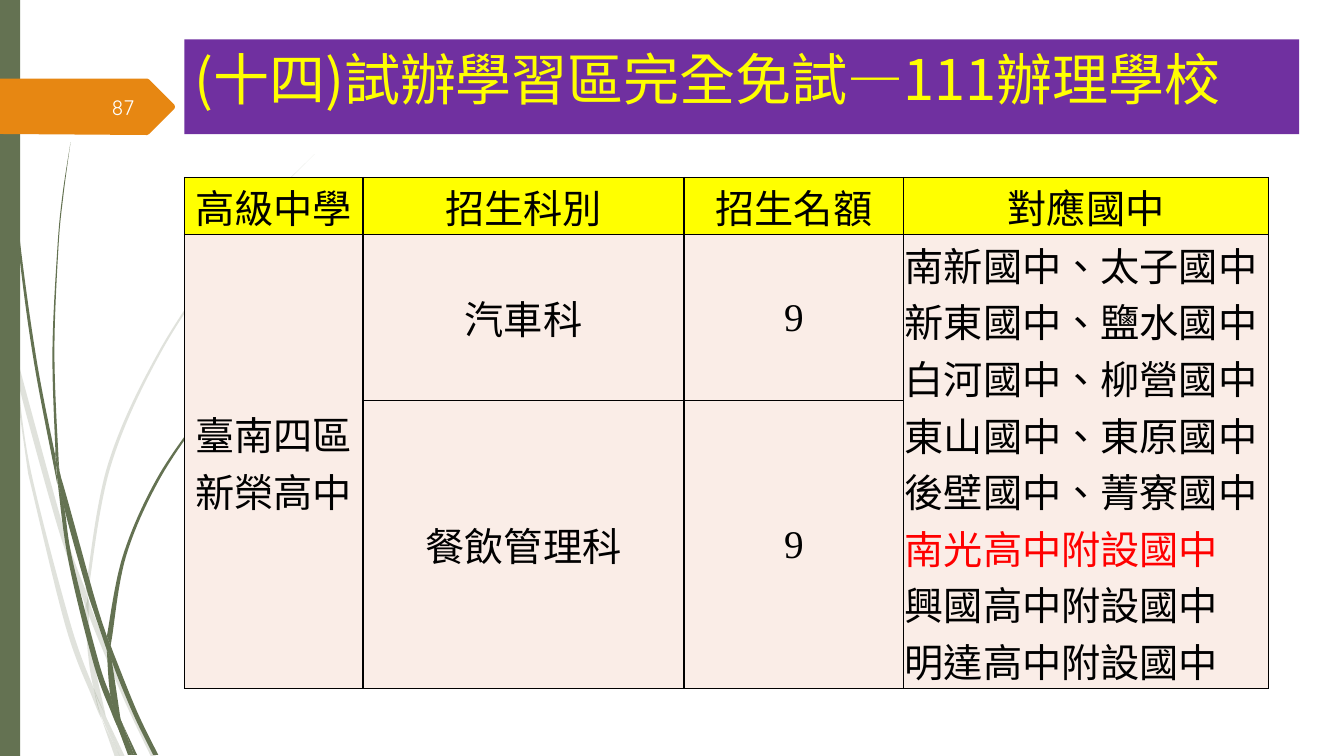
from dataclasses import dataclass

from lxml import etree
from pptx import Presentation
from pptx.dml.color import RGBColor
from pptx.enum.lang import MSO_LANGUAGE_ID
from pptx.enum.shapes import MSO_SHAPE
from pptx.enum.text import MSO_ANCHOR, PP_ALIGN
from pptx.oxml.ns import qn
from pptx.util import Emu, Inches, Pt

RECTANGLE = MSO_SHAPE.RECTANGLE
TOP, MIDDLE = MSO_ANCHOR.TOP, MSO_ANCHOR.MIDDLE
LEFT, CENTER, RIGHT = PP_ALIGN.LEFT, PP_ALIGN.CENTER, PP_ALIGN.RIGHT
TAIWAN = MSO_LANGUAGE_ID.TRADITIONAL_CHINESE

# The page is a grid of 1333 columns and 750 rows
CELL = Inches(0.01)
COLUMNS, ROWS = 1333, 750
GREEN, ORANGE, PURPLE = "647252", "E78712", "7030A0"
YELLOW, BLACK, RED, WHITE, PINK = "FFFF00", "000000", "FF0000", "FEFFFF", "FAEDE7"
CHINESE, DIGITS, NUMBER = "Noto Sans CJK SC", "Times New Roman", "Quicksand"
Point = tuple[float, float]


@dataclass(frozen=True)
class Wisp:
    """A blade of grass: one edge going out, the other coming back."""
    out: list[Point]
    back: list[Point]


@dataclass(frozen=True)
class Style:
    size: float
    font: str
    color: str
    align: PP_ALIGN = CENTER


@dataclass(frozen=True)
class Entry:
    row: int
    column: int
    lines: list[str]
    style: Style
    fill: str = PINK
    rows: int = 1
    margins: tuple[float, float] = (1, 1)


LIGHT_WISPS = [
    Wisp([(11, 350), (8, 322), (0, 282)], [(0, 299), (10, 344)]),
    Wisp([(14, 345), (17, 376), (57, 522), (84, 599)], [(85, 586), (62, 520), (14, 345)]),
    Wisp([(88, 596), (88, 610), (123, 694), (150, 751)],
         [(155, 751), (127, 692), (92, 607)]),
    Wisp([(119, 751), (124, 751)], [(105, 711)]),
    Wisp([(93, 683), (70, 619), (31, 469), (17, 376), (11, 350)],
         [(28, 470), (65, 621), (92, 693), (101, 714)]),
    Wisp([(84, 599), (87, 646), (93, 683), (105, 711)], [(104, 706), (91, 646), (88, 608)]),
    Wisp([(88, 596), (88, 584), (110, 462), (160, 349), (229, 245), (268, 198), (312, 153)],
         [(312, 153), (268, 197), (228, 244), (158, 348), (107, 461), (85, 584)]),
    Wisp([(101, 714), (114, 751)], [(119, 751)]),
    Wisp([(88, 608), (88, 596)], [(85, 586), (84, 599)]),
    Wisp([(93, 683), (99, 707), (119, 751)], [(119, 751), (105, 711)]),
]
DARK_WISPS = [
    Wisp([(3, 0), (3, 48), (7, 110), (17, 233), (33, 355), (57, 481)],
         [(55, 453), (36, 355), (19, 232), (8, 109), (5, 48), (3, 0)]),
    Wisp([(88, 592), (106, 645)], [(106, 631), (93, 590), (60, 472), (64, 505), (88, 592)]),
    Wisp([(110, 641), (111, 656), (132, 708), (152, 749)], [(157, 749), (136, 706), (113, 649)]),
    Wisp([(110, 691), (98, 657), (72, 556), (64, 505), (57, 477)],
         [(57, 477), (68, 557), (93, 659), (111, 708), (117, 722)]),
    Wisp([(60, 472), (58, 453), (54, 349), (58, 245), (63, 193), (70, 141)],
         [(70, 141), (62, 193), (57, 245), (52, 349), (55, 449)]),
    Wisp([(133, 749), (136, 749)], [(122, 719)]),
    Wisp([(57, 477), (64, 505)], [(60, 472), (55, 449), (55, 453)]),
    Wisp([(110, 641), (111, 633), (125, 552), (158, 476), (205, 406), (231, 374), (261, 344)],
         [(260, 344), (231, 373), (204, 405), (156, 474), (122, 551), (106, 631)]),
    Wisp([(117, 722), (127, 749)], [(131, 749)]),
    Wisp([(106, 645), (110, 692), (122, 719)], [(120, 716), (111, 656), (109, 651)]),
    Wisp([(106, 645), (111, 656)], [(110, 641), (106, 631)]),
    Wisp([(110, 691), (117, 722), (131, 749)], [(133, 749), (122, 719)]),
]

BODY = Style(28, CHINESE, BLACK)
COUNT = Style(28, DIGITS, BLACK)
LIST = Style(28, CHINESE, BLACK, LEFT)
RED_LINE = "南光高中附設國中"
HEADINGS = ["高級中學", "招生科別", "招生名額", "對應國中"]
TABLE_COLUMNS, TABLE_ROWS = [177, 318.5, 218, 361.5], [57, 164.5, 285.5]
ENTRIES = [Entry(0, column, [text], BODY, YELLOW) for column, text in enumerate(HEADINGS)] + [
    Entry(1, 0, ["臺南四區", "新榮高中"], BODY, rows=2),
    Entry(1, 1, ["汽車科"], BODY, margins=(2, 0)),
    Entry(2, 1, ["餐飲管理科"], BODY, margins=(2, 0)),
    Entry(1, 2, ["9"], COUNT),
    Entry(2, 2, ["9"], COUNT),
    Entry(1, 3, ["南新國中、太子國中", "新東國中、鹽水國中", "白河國中、柳營國中",
                 "東山國中、東原國中", "後壁國中、菁寮國中", RED_LINE,
                 "興國高中附設國中", "明達高中附設國中"], LIST, rows=2),
]


def grid(count: float) -> Emu:
    return Emu(round(count * CELL))


def paint(target, color: str, opacity: int = 100) -> None:
    target.fill.solid()
    target.fill.fore_color.rgb = RGBColor.from_string(color)
    if opacity < 100:
        swatch = target.fill._xPr.find(f".//{qn('a:srgbClr')}")
        etree.SubElement(swatch, qn("a:alpha"), val=str(opacity * 1000))


def finish(shape, color: str, opacity: int = 100) -> None:
    shape.shadow.inherit = False
    shape.line.fill.background()
    paint(shape, color, opacity)


def write(frame, lines: list[str], style: Style) -> None:
    for index, text in enumerate(lines):
        para = frame.paragraphs[0] if index == 0 else frame.add_paragraph()
        para.alignment = style.align
        span = para.add_run()
        span.text = text
        looks = {"size": Pt(style.size), "name": style.font, "language_id": TAIWAN}
        for name, value in looks.items():
            setattr(span.font, name, value)
        color = RED if text == RED_LINE else style.color
        span.font.color.rgb = RGBColor.from_string(color)
        etree.SubElement(span.font._element, qn("a:ea"), typeface=style.font)


def draw_outline(page, points: list[Point], color: str, opacity: int = 100):
    scaled = [(grid(x), grid(y)) for x, y in points]
    builder = page.shapes.build_freeform(*scaled[0], scale=1.0)
    builder.add_line_segments(scaled[1:], close=True)
    outline = builder.convert_to_shape()
    finish(outline, color, opacity)
    return outline


def handles(knots: list[Point]) -> list[list[Point]]:
    """Bezier control points and end point of each smooth step between knots."""
    padded = [knots[0], *knots, knots[-1]]
    return [[tuple(q + (r - p) / 6 for p, q, r in zip(a, b, c)),
             tuple(r - (s - q) / 6 for q, r, s in zip(b, c, d)), c]
            for a, b, c, d in zip(padded, padded[1:], padded[2:], padded[3:])]


def draw_wisp(page, wisp: Wisp, opacity: int) -> None:
    points = wisp.out + wisp.back
    outline = draw_outline(page, points, GREEN, opacity)
    left, top = (min(values) for values in zip(*points))
    curves = [*handles(wisp.out), None, *handles(wisp.back)]
    segments = list(outline._element.iter(qn("a:lnTo")))
    for segment, curve in zip(segments, curves):
        if curve is None:
            continue
        bend = etree.Element(qn("a:cubicBezTo"))
        for x, y in curve:
            etree.SubElement(bend, qn("a:pt"), x=str(grid(x - left)), y=str(grid(y - top)))
        segment.getparent().replace(segment, bend)


def draw_bar(page, place: tuple[float, ...], color: str):
    bar = page.shapes.add_shape(RECTANGLE, *map(grid, place))
    finish(bar, color)
    return bar


def add_borders(cell) -> None:
    properties = cell._tc.get_or_add_tcPr()
    for index, side in enumerate(("lnL", "lnR", "lnT", "lnB")):
        line = etree.Element(qn(f"a:{side}"), w=str(Pt(1)))
        solid = etree.SubElement(line, qn("a:solidFill"))
        etree.SubElement(solid, qn("a:srgbClr"), val=BLACK)
        properties.insert(index, line)


def draw_table(page) -> None:
    size = sum(TABLE_COLUMNS), sum(TABLE_ROWS)
    table = page.shapes.add_table(len(TABLE_ROWS), len(TABLE_COLUMNS),
                                  *map(grid, (183, 176, *size))).table
    for column, width in zip(table.columns, TABLE_COLUMNS):
        column.width = grid(width)
    for row, height in zip(table.rows, TABLE_ROWS):
        row.height = grid(height)
    for entry in ENTRIES:
        cell = table.cell(entry.row, entry.column)
        if entry.rows > 1:
            cell.merge(table.cell(entry.row + entry.rows - 1, entry.column))
        side, top = map(grid, entry.margins)
        layout = {"vertical_anchor": MIDDLE, "margin_left": side, "margin_right": side,
                  "margin_top": top, "margin_bottom": 0}
        for name, value in layout.items():
            setattr(cell, name, value)
        write(cell.text_frame, entry.lines, entry.style)
        for offset in range(entry.rows):
            part = table.cell(entry.row + offset, entry.column)
            paint(part, entry.fill)
            add_borders(part)


def main() -> None:
    deck = Presentation()
    deck.slide_width, deck.slide_height = grid(COLUMNS), grid(ROWS)
    page = deck.slides.add_slide(deck.slide_layouts[6])

    # Grass and side bar
    for wisps, opacity in ((LIGHT_WISPS, 20), (DARK_WISPS, 100)):
        for wisp in wisps:
            draw_wisp(page, wisp, opacity)
    draw_bar(page, (0, 0, 20, ROWS), GREEN)

    # Page number tag
    draw_outline(page, [(0, 78), (146, 78), (148, 79), (173, 104), (173.5, 106), (173, 108),
                        (148, 133), (146, 134), (0, 133)], ORANGE)
    box = page.shapes.add_textbox(*map(grid, (58, 86, 85, 40)))
    box.text_frame.word_wrap = True
    box.text_frame.vertical_anchor = MIDDLE
    write(box.text_frame, ["87"], Style(15, NUMBER, WHITE, RIGHT))

    # Table and title
    draw_table(page)
    title = draw_bar(page, (183, 39, 1105.5, 94), PURPLE)
    title.text_frame.word_wrap = True
    title.text_frame.vertical_anchor = TOP
    write(title.text_frame, ["(十四)試辦學習區完全免試—111辦理學校"],
          Style(40, CHINESE, YELLOW, LEFT))
    deck.save("out.pptx")


if __name__ == "__main__":
    main()
